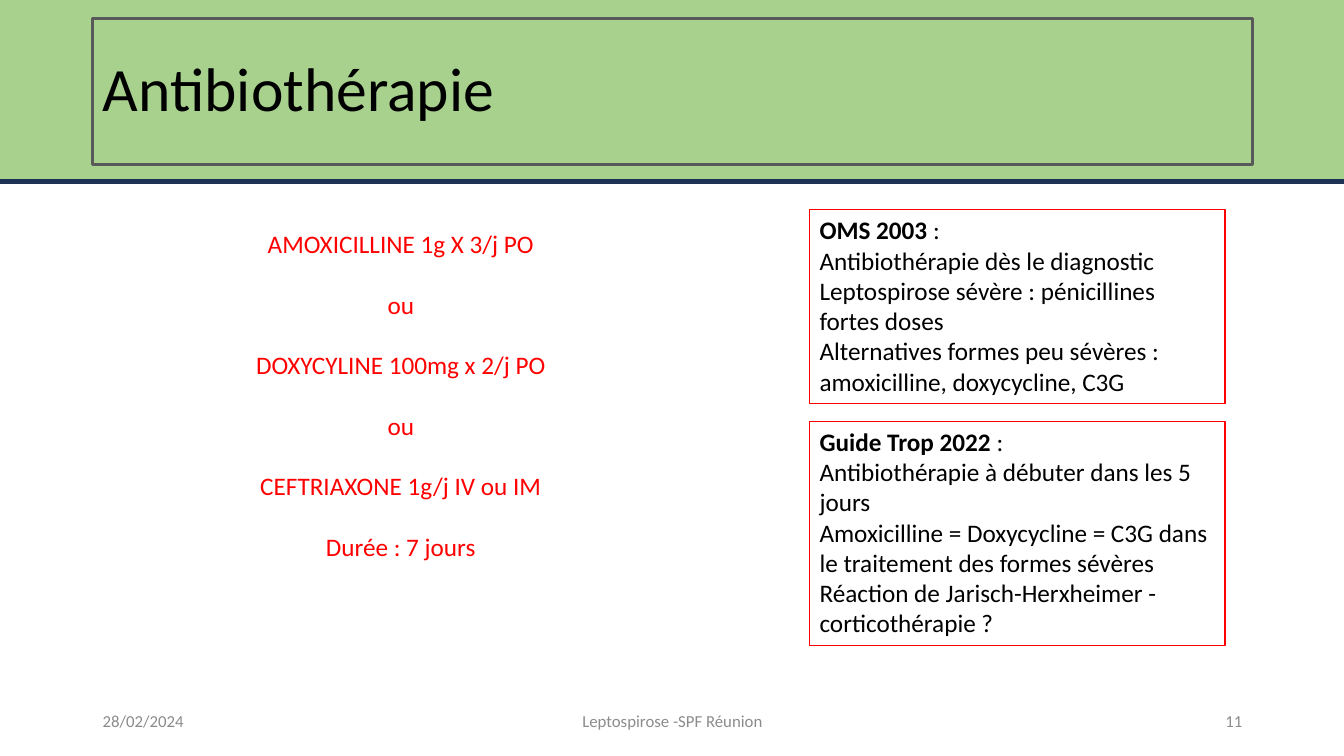
import pptx
import pptx.util
import pptx.dml.color
import pptx.enum.shapes
import pptx.enum.text

Inches = pptx.util.Inches
Pt = pptx.util.Pt
RGBColor = pptx.dml.color.RGBColor
ALIGN = pptx.enum.text.PP_ALIGN
ANCHOR = pptx.enum.text.MSO_ANCHOR
RECT = pptx.enum.shapes.MSO_SHAPE.RECTANGLE

GREEN = RGBColor(0xA9, 0xD1, 0x8E)
NAVY = RGBColor(0x1E, 0x32, 0x56)
FRAME = RGBColor(0x59, 0x59, 0x59)
GREY = RGBColor(0x8C, 0x8C, 0x8C)
RED = RGBColor(0xFF, 0x00, 0x00)
BLACK = RGBColor(0x00, 0x00, 0x00)


def write(shape, lines, size=18, color=BLACK, align=ALIGN.LEFT,
          anchor=ANCHOR.TOP, gap=0, lead=1.0):
    """Fill a shape with paragraphs; each line is a list of (text, bold)."""
    frame = shape.text_frame
    frame.word_wrap = True
    frame.auto_size = pptx.enum.text.MSO_AUTO_SIZE.NONE
    frame.vertical_anchor = anchor
    for i, line in enumerate(lines):
        para = frame.add_paragraph() if i else frame.paragraphs[0]
        para.alignment = align
        para.line_spacing = lead
        para.space_before = Pt(gap if i else 0)
        for text, bold in line:
            run = para.add_run()
            run.text = text
            run.font.name = "Calibri"
            run.font.size = Pt(size)
            run.font.bold = bold
            run.font.color.rgb = color


deck = pptx.Presentation()
deck.slide_width = Inches(13.33)
deck.slide_height = Inches(7.5)
slide = deck.slides.add_slide(deck.slide_layouts[5])
shapes = slide.shapes

# Title
title = shapes.title
title.left, title.top = Inches(0.92), Inches(0.18)
title.width, title.height = Inches(11.5), Inches(1.45)
title.line.color.rgb = FRAME
title.line.width = Pt(2.25)
write(title, [[("Antibiothérapie", False)]], size=44, anchor=ANCHOR.MIDDLE, lead=0.9)

# Header band, behind the title
band = shapes.add_shape(RECT, Inches(-0.49), Inches(-0.22), Inches(14.32), Inches(2.02))
band.shadow.inherit = False
band.fill.solid()
band.fill.fore_color.rgb = GREEN
band.line.color.rgb = NAVY
band.line.width = Pt(3)
title.element.addprevious(band.element)

# Footer
footer = [
    (0.92, 3, "28/02/2024", ALIGN.LEFT),
    (4.42, 4.5, "Leptospirose -SPF Réunion", ALIGN.CENTER),
    (9.42, 3, "11", ALIGN.RIGHT),
]
for left, width, text, align in footer:
    box = shapes.add_textbox(Inches(left), Inches(6.95), Inches(width), Inches(0.4))
    write(box, [[(text, False)]], size=12, color=GREY, align=align, anchor=ANCHOR.MIDDLE)

# Guideline boxes
guides = [
    (2.08, 1.92, "OMS 2003 ", [
        "Antibiothérapie dès le diagnostic",
        "Leptospirose sévère : pénicillines fortes doses",
        "Alternatives formes peu sévères : amoxicilline, doxycycline, C3G",
    ]),
    (4.18, 2.22, "Guide Trop 2022 ", [
        "Antibiothérapie à débuter dans les 5 jours",
        "Amoxicilline = Doxycycline = C3G dans le traitement des formes sévères",
        "Réaction de Jarisch-Herxheimer - corticothérapie ?",
    ]),
]
for top, height, source, points in guides:
    box = shapes.add_shape(RECT, Inches(8.03), Inches(top), Inches(4.12), Inches(height))
    box.shadow.inherit = False
    box.fill.background()
    box.line.color.rgb = RED
    box.line.width = Pt(0.75)
    head = [(source, True), (":", False)]
    write(box, [head] + [[(point, False)] for point in points])

# Drug choices
drugs = [
    "AMOXICILLINE 1g X 3/j PO",
    "ou",
    "DOXYCYLINE 100mg x 2/j PO",
    "ou",
    "CEFTRIAXONE 1g/j IV ou IM",
    "Durée : 7 jours",
]
box = shapes.add_textbox(Inches(0.48), Inches(2.22), Inches(6.99), Inches(3.43))
write(box, [[(drug, False)] for drug in drugs], color=RED, align=ALIGN.CENTER, gap=21.6)

deck.save("out.pptx")
